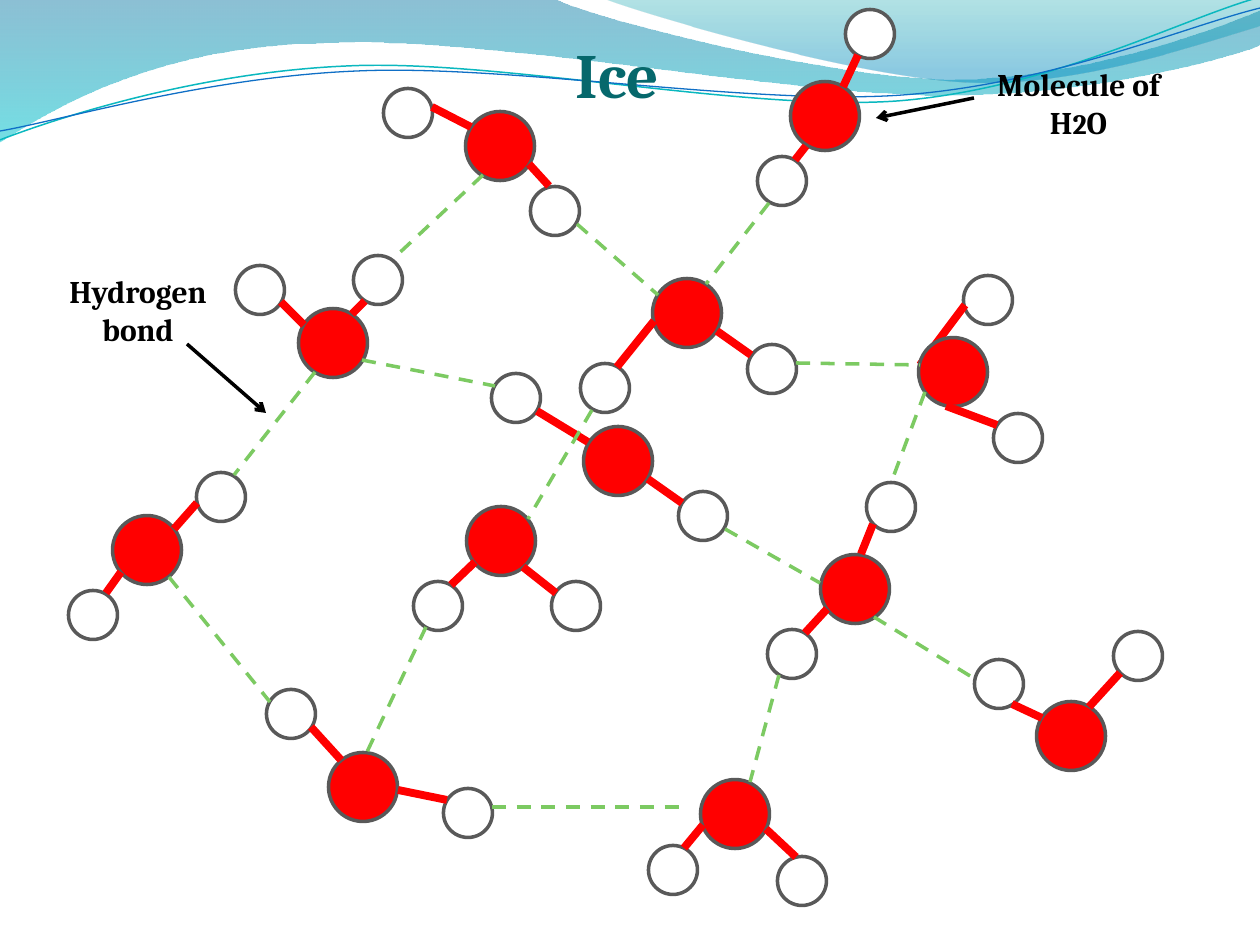
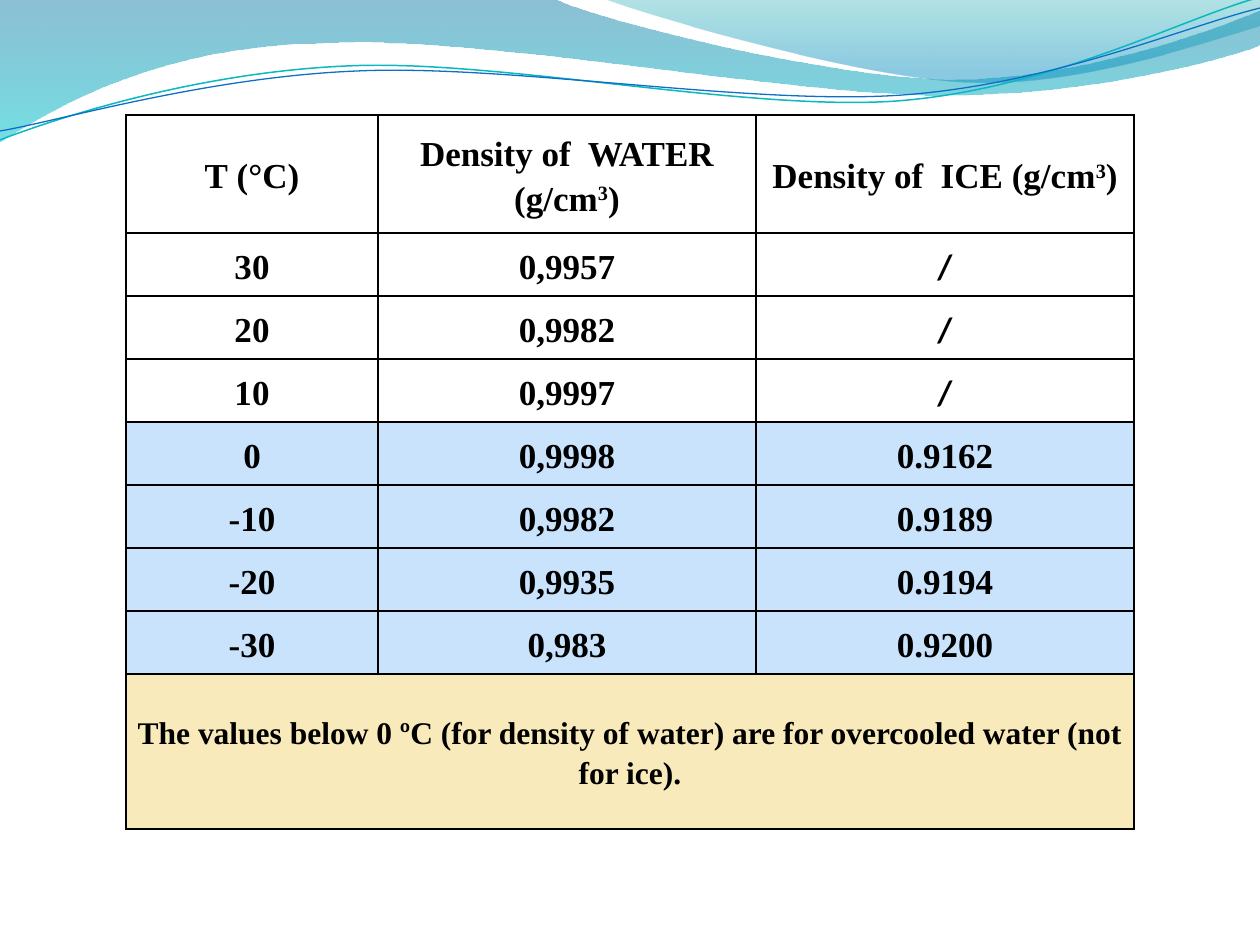
from dataclasses import dataclass
from math import cos, radians, sin
from typing import Any

from lxml import etree
from pptx import Presentation
from pptx.dml.color import RGBColor
from pptx.enum.dml import MSO_LINE
from pptx.enum.shapes import MSO_CONNECTOR, MSO_SHAPE
from pptx.enum.text import MSO_ANCHOR, PP_ALIGN
from pptx.oxml.ns import qn
from pptx.util import Emu, Pt

STRAIGHT = MSO_CONNECTOR.STRAIGHT
CIRCLE = MSO_SHAPE.OVAL
DASH = MSO_LINE.DASH
CENTER = PP_ALIGN.CENTER
MIDDLE = MSO_ANCHOR.MIDDLE

PX_PER_INCH = 126
EMU_PER_PX = 914400 / PX_PER_INCH
SLIDE_WIDTH, SLIDE_HEIGHT = 1260, 945

COLORS = {
    "title": "06686C", "ink": "000000", "paper": "FFFFFF",
    "oxygen": "FF0000", "hydrogen": "FFFFFF", "atom_edge": "595959",
    "hydrogen_bond": "7CCA62",
    "band_blue": "0074A1", "band_cyan": "00C6CF",
    "crest_teal": "00A1A9", "crest_blue": "008BBF",
    "thread_teal": "0AB8BF", "thread_blue": "0F6FC6",
    "ice_row": "C8E3FB", "note_row": "F8EABA",
}
HEADING_FONT = "Cambria"
TABLE_FONT = "Times New Roman"
SLASH_FONT = "Calibri"

Point = tuple[int, int]
Segment = tuple[int, ...]


@dataclass(frozen=True)
class Stop:
    color: str
    position: float
    alpha: int


@dataclass(frozen=True)
class Wave:
    """A start point, then lines (x, y) or cubic curves (x1, y1, x2, y2, x, y)."""
    start: Point
    segments: tuple[Segment, ...]
    stops: tuple[Stop, ...] = ()
    line_color: str = ""
    line_width: float = 0
    pivot: Point = (0, 0)
    tilt: float = 0


@dataclass(frozen=True)
class Bond:
    start: Point
    end: Point
    behind_oxygen: bool = False


@dataclass(frozen=True)
class Molecule:
    oxygen: Point
    hydrogens: tuple[Point, Point]
    bonds: tuple[Bond, Bond]


@dataclass(frozen=True)
class LineStyle:
    color: str
    width: float
    dashed: bool = False
    arrow: bool = False


@dataclass(frozen=True)
class Label:
    box: tuple[int, int, int, int]
    runs: tuple[tuple[str, int], ...]
    color: str = "ink"


WAVES = (
    Wave((0, 0), ((554, -1), (600, 21, 837, 79, 955, 79), (1075, 79, 1207, 33, 1260, 11),
                  (1261, 45), (1239, 55, 1096, 96, 940, 95), (784, 95, 481, 35, 324, 43),
                  (163, 45, 58, 105, -1, 142)),
         stops=(Stop("band_blue", 0, 45), Stop("band_cyan", 1, 55))),
    Wave((604, -1), ((641, 14, 859, 78, 969, 82), (1079, 87, 1211, 40, 1260, 26), (1260, 0)),
         stops=(Stop("crest_teal", 0, 30), Stop("crest_blue", 0.8, 45))),
    Wave((0, 140), ((60, 117, 199, 72, 349, 66), (498, 59, 747, 112, 898, 101),
                    (1050, 89, 1182, 19, 1257, -2)),
         line_color="thread_teal", line_width=0.85, pivot=(629, 72), tilt=357.3),
    Wave((0, 131), ((59, 121, 207, 77, 357, 71), (508, 64, 752, 106, 903, 95),
                    (1053, 84, 1186, 26, 1260, 8)),
         line_color="thread_blue", line_width=0.75, pivot=(629, 74), tilt=357.3),
)

OXYGEN_SIZE, HYDROGEN_SIZE = 69, 49
MOLECULES = (
    Molecule((500, 146), ((408, 113), (555, 211)),
             (Bond((471, 127), (432, 107)), Bond((549, 186), (529, 164)))),
    Molecule((953, 372), ((988, 300), (1018, 438)),
             (Bond((965, 305), (920, 365), True), Bond((946, 406), (997, 425)))),
    Molecule((735, 814), ((802, 881), (673, 870)),
             (Bond((796, 857), (766, 829)), Bond((703, 825), (684, 848)))),
    Molecule((618, 461), ((516, 398), (703, 516)),
             (Bond((588, 442), (537, 411)), Bond((682, 503), (648, 479)))),
    Molecule((501, 541), ((438, 606), (576, 606)),
             (Bond((475, 562), (451, 585)), Bond((556, 593), (523, 567)))),
    Molecule((333, 343), ((260, 290), (378, 280)),
             (Bond((304, 325), (281, 302)), Bond((365, 301), (352, 314)))),
    Molecule((825, 116), ((782, 181), (870, 34)),
             (Bond((806, 146), (795, 160)), Bond((858, 55), (843, 87)))),
    Molecule((687, 313), ((605, 388), (772, 369)),
             (Bond((654, 321), (617, 367)), Bond((751, 355), (717, 331)))),
    Molecule((1071, 736), ((999, 684), (1138, 656)),
             (Bond((1042, 718), (1012, 704)), Bond((1120, 673), (1089, 707)))),
    Molecule((855, 589), ((792, 654), (891, 507)),
             (Bond((827, 609), (805, 633)), Bond((873, 524), (861, 554)))),
    Molecule((363, 787), ((291, 714), (468, 813)),
             (Bond((341, 760), (311, 727)), Bond((447, 800), (398, 790)))),
    Molecule((147, 550), ((93, 615), (221, 497)),
             (Bond((121, 572), (106, 593)), Bond((197, 503), (174, 529)))),
)
HYDROGEN_BONDS = (
    ((874, 617), (975, 679)), ((796, 363), (920, 365)), ((769, 203), (706, 284)),
    ((577, 224), (658, 295)), ((592, 410), (528, 519)), ((925, 392), (891, 483)),
    ((725, 529), (820, 583)), ((483, 175), (394, 258)), ((362, 360), (495, 386)),
    ((779, 675), (750, 782)), ((315, 372), (234, 475)), ((169, 577), (270, 702)),
    ((426, 627), (367, 752)), ((492, 807), (687, 807)),
)
POINTERS = (((974, 98), (876, 118)), ((187, 344), (266, 413)))
LABELS = (
    Label((374, 29, 486, 89), (("Ice", 36),), "title"),
    Label((965, 59, 227, 89), (("Molecule of H", 18), ("2", 16), ("O", 18))),
    Label((49, 266, 178, 89), (("Hydrogen bond", 18),)),
)
COVALENT = LineStyle("oxygen", 4.5)
HYDROGEN_BOND = LineStyle("hydrogen_bond", 2, dashed=True)
POINTER = LineStyle("ink", 2, arrow=True)

# A caret starts a superscript digit, \v breaks the line
DENSITY_ROWS = (
    ("Т (°C)", "Density of  WATER\v(g/cm^3)", "Density of  ICE (g/cm^3)"),
    ("30", "0,9957", "/"), ("20", "0,9982", "/"), ("10", "0,9997", "/"),
    ("0", "0,9998", "0.9162"), ("-10", "0,9982", "0.9189"),
    ("-20", "0,9935", "0.9194"), ("-30", "0,983", "0.9200"),
    ("The values below 0 ºC (for density of water) are for overcooled water (not for ice).",
     "", ""),
)
FIRST_ICE_ROW, NOTE_ROW = 4, 8
COLUMN_WIDTHS = (252, 378, 378)
ROW_HEIGHTS = (118, *[63] * 7, 155)


def px(length: float) -> Emu:
    return Emu(round(length * EMU_PER_PX))


def rgb(name: str) -> RGBColor:
    return RGBColor.from_string(COLORS[name])


def set_format(target: Any, values: dict[str, Any]) -> None:
    for name, value in values.items():
        setattr(target, name, value)


def add_xml(parent: Any, tag: str, **attributes: Any) -> Any:
    return etree.SubElement(parent, qn(tag), {k: str(v) for k, v in attributes.items()})


def style_line(line: Any, color: str, width: float) -> None:
    line.color.rgb = rgb(color)
    line.width = Pt(width)


def untilt(wave: Wave, x: int, y: int) -> tuple[int, int]:
    """Place a point as it lies before the ribbon is turned by its tilt."""
    turn = radians(-wave.tilt)
    dx, dy = x - wave.pivot[0], y - wave.pivot[1]
    return (px(wave.pivot[0] + dx * cos(turn) - dy * sin(turn)),
            px(wave.pivot[1] + dx * sin(turn) + dy * cos(turn)))


def bend_curves(ribbon: Any, segments: tuple[Segment, ...]) -> None:
    outline = ribbon._element.spPr.find(".//" + qn("a:path"))
    nodes = iter(outline.findall(qn("a:lnTo")))
    for segment in segments:
        group = [next(nodes) for _ in segment[::2]]
        if len(group) == 3:
            curve = etree.Element(qn("a:cubicBezTo"))
            group[0].addprevious(curve)
            for node in group:
                curve.append(node[0])
                outline.remove(node)


def draw_wave(slide: Any, wave: Wave) -> None:
    points = [untilt(wave, *segment[i:i + 2])
              for segment in wave.segments for i in range(0, len(segment), 2)]
    builder = slide.shapes.build_freeform(*untilt(wave, *wave.start))
    builder.add_line_segments(points, close=bool(wave.stops))
    ribbon = builder.convert_to_shape()
    bend_curves(ribbon, wave.segments)
    ribbon.shadow.inherit = False
    if not wave.stops:
        ribbon.rotation = wave.tilt
        ribbon.fill.background()
        style_line(ribbon.line, wave.line_color, wave.line_width)
        return
    ribbon.line.fill.background()
    ribbon.fill.gradient()
    ribbon.fill.gradient_angle = 270
    for gradient_stop, stop in zip(ribbon.fill.gradient_stops, wave.stops):
        gradient_stop.color.rgb = rgb(stop.color)
        gradient_stop.position = stop.position
    tints = ribbon._element.spPr.findall(".//" + qn("a:srgbClr"))
    for tint, stop in zip(tints, wave.stops):
        add_xml(tint, "a:alpha", val=stop.alpha * 1000)


def draw_line(slide: Any, start: Point, end: Point, style: LineStyle) -> None:
    link = slide.shapes.add_connector(STRAIGHT, *map(px, (*start, *end)))
    style_line(link.line, style.color, style.width)
    if style.dashed:
        link.line.dash_style = DASH
    if style.arrow:
        add_xml(link.line._get_or_add_ln(), "a:tailEnd", type="arrow")
    add_xml(link._element.spPr, "a:effectLst")


def draw_atom(slide: Any, center: Point, size: int, color: str) -> None:
    corner = [px(c - size / 2) for c in center]
    atom = slide.shapes.add_shape(CIRCLE, *corner, px(size), px(size))
    atom.shadow.inherit = False
    atom.fill.solid()
    atom.fill.fore_color.rgb = rgb(color)
    style_line(atom.line, "atom_edge", 2)


def draw_bonds(slide: Any, molecule: Molecule, behind_oxygen: bool) -> None:
    for bond in molecule.bonds:
        if bond.behind_oxygen == behind_oxygen:
            draw_line(slide, bond.start, bond.end, COVALENT)


def draw_molecule(slide: Any, molecule: Molecule) -> None:
    for hydrogen in molecule.hydrogens:
        draw_atom(slide, hydrogen, HYDROGEN_SIZE, "hydrogen")
    draw_bonds(slide, molecule, True)
    draw_atom(slide, molecule.oxygen, OXYGEN_SIZE, "oxygen")
    draw_bonds(slide, molecule, False)


def add_run(paragraph: Any, text: str, size: int, font: str, color: str = "ink") -> Any:
    run = paragraph.add_run()
    run.text = text
    set_format(run.font, {"size": Pt(size), "name": font, "bold": True})
    run.font.color.rgb = rgb(color)
    return run


def draw_label(slide: Any, label: Label) -> None:
    frame = slide.shapes.add_textbox(*map(px, label.box)).text_frame
    frame.word_wrap = True
    paragraph = frame.paragraphs[0]
    paragraph.alignment = CENTER
    for text, size in label.runs:
        add_run(paragraph, text, size, HEADING_FONT, label.color)


def fill_cell(cell: Any, text: str, color: str, size: int, space_after: float) -> None:
    set_format(cell, {"vertical_anchor": MIDDLE, **dict.fromkeys(
        ("margin_left", "margin_right", "margin_top", "margin_bottom"), px(4))})
    for side in ("a:lnL", "a:lnR", "a:lnT", "a:lnB"):
        border = add_xml(cell._tc.get_or_add_tcPr(), side, w=Pt(1))
        add_xml(add_xml(border, "a:solidFill"), "a:srgbClr", val=COLORS["ink"])
    cell.fill.solid()
    cell.fill.fore_color.rgb = rgb(color)
    if not text:
        return
    paragraph = cell.text_frame.paragraphs[0]
    set_format(paragraph, {"alignment": CENTER, "line_spacing": 1.15,
                           "space_after": Pt(space_after)})
    font = SLASH_FONT if text == "/" else TABLE_FONT
    base, _, raised = text.partition("^")
    first, _, second = base.partition("\v")
    add_run(paragraph, first, size, font)
    if second:
        paragraph.add_line_break()
        add_run(paragraph, second, size, font)
    if raised:
        exponent = add_run(paragraph, raised[0], size, font)
        exponent.font._element.set("baseline", "30000")
        add_run(paragraph, raised[1:], size, font)


def draw_density_table(slide: Any) -> None:
    table = slide.shapes.add_table(len(ROW_HEIGHTS), len(COLUMN_WIDTHS), px(126), px(115),
                                   px(sum(COLUMN_WIDTHS)), px(sum(ROW_HEIGHTS))).table
    set_format(table, {"first_row": False, "horz_banding": False})
    for column, width in zip(table.columns, COLUMN_WIDTHS):
        column.width = px(width)
    for r, (texts, height) in enumerate(zip(DENSITY_ROWS, ROW_HEIGHTS)):
        table.rows[r].height = px(height)
        is_note = r == NOTE_ROW
        color = "note_row" if is_note else "ice_row" if r >= FIRST_ICE_ROW else "paper"
        for c, text in enumerate(texts):
            fill_cell(table.cell(r, c), text, color, 18 if is_note else 20, 2.2 if is_note else 0)
    table.cell(NOTE_ROW, 0).merge(table.cell(NOTE_ROW, len(COLUMN_WIDTHS) - 1))


# Both slides carry the same waves
def add_wave_slide(deck: Any) -> Any:
    slide = deck.slides.add_slide(deck.slide_layouts[6])
    for wave in WAVES:
        draw_wave(slide, wave)
    return slide


def main() -> None:
    deck = Presentation()
    set_format(deck, {"slide_width": px(SLIDE_WIDTH), "slide_height": px(SLIDE_HEIGHT)})
    # Ice lattice
    ice = add_wave_slide(deck)
    for molecule in MOLECULES:
        draw_molecule(ice, molecule)
    for lines, style in ((HYDROGEN_BONDS, HYDROGEN_BOND), (POINTERS, POINTER)):
        for start, end in lines:
            draw_line(ice, start, end, style)
    for label in LABELS:
        draw_label(ice, label)
    # Densities of water and ice
    draw_density_table(add_wave_slide(deck))
    deck.save("out.pptx")


if __name__ == "__main__":
    main()
